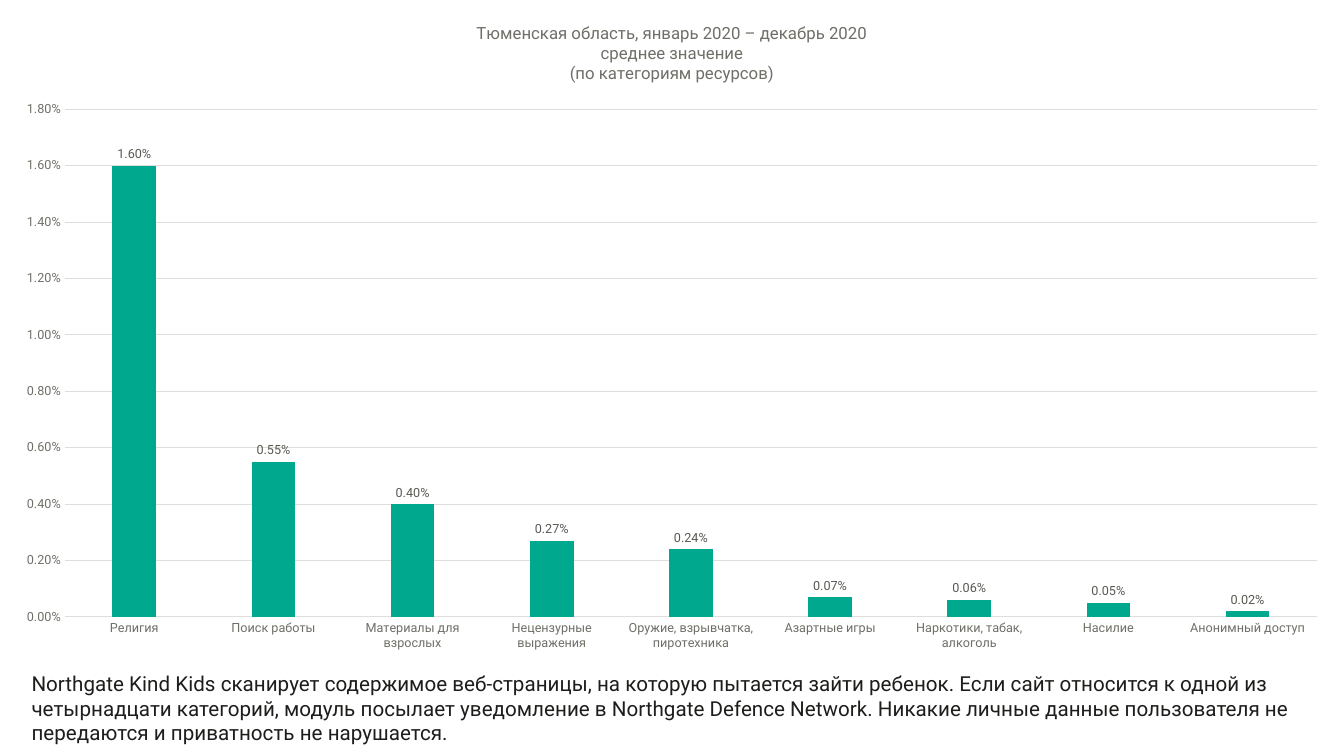
from dataclasses import dataclass

from pptx import Presentation
from pptx.chart.data import CategoryChartData as ChartData
from pptx.dml.color import RGBColor as Rgb
from pptx.enum.chart import XL_CHART_TYPE as Kind
from pptx.enum.chart import XL_LABEL_POSITION as Spot
from pptx.enum.chart import XL_TICK_MARK as Tick
from pptx.util import Emu, Pt

PX = 9525  # EMU in one px, 96 px to the inch


@dataclass(frozen=True)
class Theme:
    face: str = "Roboto"
    bar: str = "00A88E"
    grid: str = "DEDEDC"
    axis: str = "6F6F68"
    label: str = "585852"
    ink: str = "1D1D1B"
    small: float = 9
    head: float = 12
    body: float = 14.7
    rule: float = 0.75


@dataclass(frozen=True)
class Box:
    left: int
    top: int
    width: int
    height: int

    def emu(self) -> list[Emu]:
        return [px(n) for n in (self.left, self.top, self.width, self.height)]


@dataclass(frozen=True)
class Share:
    name: str
    value: float


THEME = Theme()
CHART = Box(0, 0, 1280, 632)
NOTE = Box(17, 632, 1245, 83)
PERCENT = "0.00%"

TITLE = [
    "Тюменская область, январь 2020 – декабрь 2020",
    "среднее значение",
    "(по категориям ресурсов)",
]
SHARES = [
    Share("Религия", 0.016),
    Share("Поиск работы", 0.0055),
    Share("Материалы для взрослых", 0.004),
    Share("Нецензурные выражения", 0.0027),
    Share("Оружие, взрывчатка, пиротехника", 0.0024),
    Share("Азартные игры", 0.0007),
    Share("Наркотики, табак, алкоголь", 0.0006),
    Share("Насилие", 0.0005),
    Share("Анонимный доступ", 0.0002),
]
ABOUT = (
    "Northgate Kind Kids сканирует содержимое веб-страницы, на которую "
    "пытается зайти ребенок. Если сайт относится к одной из четырнадцати "
    "категорий, модуль посылает уведомление в Northgate Defence Network. "
    "Никакие личные данные пользователя не передаются и приватность не "
    "нарушается."
)


def px(n: int) -> Emu:
    return Emu(n * PX)


def style(font, *, size: float, color: str) -> None:
    font.name = THEME.face
    font.size = Pt(size)
    font.bold = False
    font.color.rgb = Rgb.from_string(color)


def write(frame, lines: list[str], *, size: float, color: str) -> None:
    """Fill a text frame with one paragraph per line."""
    for i, line in enumerate(lines):
        para = frame.add_paragraph() if i else frame.paragraphs[0]
        run = para.add_run()
        run.text = line
        style(run.font, size=size, color=color)


def stroke(line) -> None:
    line.color.rgb = Rgb.from_string(THEME.grid)
    line.width = Pt(THEME.rule)


def draw_axes(chart) -> None:
    cat, val = chart.category_axis, chart.value_axis
    for axis in (cat, val):
        axis.major_tick_mark = axis.minor_tick_mark = Tick.NONE
        style(axis.tick_labels.font, size=THEME.small, color=THEME.axis)
    cat.has_major_gridlines = False
    stroke(cat.format.line)
    val.minimum_scale, val.maximum_scale, val.major_unit = 0, 0.018, 0.002
    val.tick_labels.number_format = PERCENT
    val.tick_labels.number_format_is_linked = False
    val.format.line.fill.background()
    stroke(val.major_gridlines.format.line)


def draw_bars(plot) -> None:
    plot.gap_width, plot.overlap = 219, -27
    plot.vary_by_categories = False
    fill = plot.series[0].format.fill
    fill.solid()
    fill.fore_color.rgb = Rgb.from_string(THEME.bar)
    tags = plot.series[0].data_labels
    tags.show_value = True
    tags.position = Spot.OUTSIDE_END
    tags.number_format = PERCENT
    tags.number_format_is_linked = False
    style(tags.font, size=THEME.small, color=THEME.label)


def draw_chart(slide) -> None:
    data = ChartData(number_format=PERCENT)
    data.categories = [share.name for share in SHARES]
    data.add_series("Series 1", [share.value for share in SHARES])
    chart = slide.shapes.add_chart(Kind.COLUMN_CLUSTERED, *CHART.emu(), data).chart
    chart.has_legend = False
    chart.font.name, chart.font.size = "Arial", Pt(10)
    chart.has_title = True
    chart.chart_title.include_in_layout = False
    write(chart.chart_title.text_frame, TITLE, size=THEME.head, color=THEME.axis)
    draw_axes(chart)
    draw_bars(chart.plots[0])


def draw_note(slide) -> None:
    frame = slide.shapes.add_textbox(*NOTE.emu()).text_frame
    frame.word_wrap = True
    frame.margin_left = frame.margin_right = px(13)
    frame.margin_top = frame.margin_bottom = px(7)
    write(frame, [ABOUT], size=THEME.body, color=THEME.ink)


def main() -> None:
    deck = Presentation()
    deck.slide_width, deck.slide_height = px(1280), px(720)
    slide = deck.slides.add_slide(deck.slide_layouts[6])
    # Note under the chart
    draw_note(slide)
    # Shares by category
    draw_chart(slide)
    deck.save("out.pptx")


if __name__ == "__main__":
    main()
